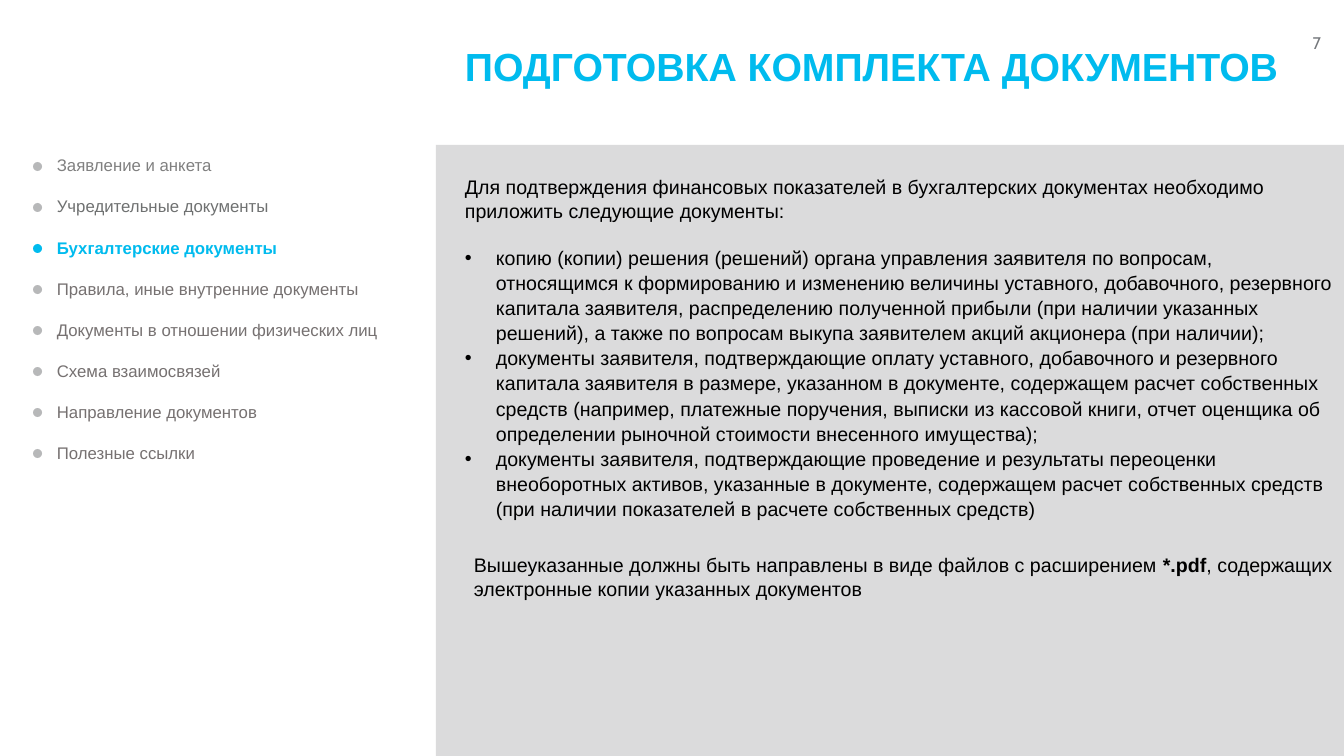
"""Builds the slide on preparing the set of accounting documents."""
from lxml import etree
from pptx import Presentation
from pptx import util as u
from pptx.dml.color import RGBColor
from pptx.enum import shapes, text
from pptx.oxml.ns import qn

COLOURS = {
    "accent": "00BBEE", "panel": "DBDBDC", "dot": "B7B8B9", "black": "000000",
    "number": "74777B", "first": "808080", "second": "6F7171", "menu": "767171",
}
MENU = [
    ("Заявление и анкета", "first"),
    ("Учредительные документы", "second"),
    ("Бухгалтерские документы", "accent"),
    ("Правила, иные внутренние документы", "menu"),
    ("Документы в отношении физических лиц", "menu"),
    ("Схема взаимосвязей", "menu"),
    ("Направление документов", "menu"),
    ("Полезные ссылки", "menu"),
]
INTRO = ("Для подтверждения финансовых показателей в бухгалтерских документах "
         "необходимо приложить следующие документы:")
DOCUMENTS = [
    "копию (копии) решения (решений) органа управления заявителя по вопросам, "
    "относящимся к формированию и изменению величины уставного, добавочного, "
    "резервного капитала заявителя, распределению полученной прибыли (при наличии "
    "указанных решений), а также по вопросам выкупа заявителем акций акционера "
    "(при наличии);",
    "документы заявителя, подтверждающие оплату уставного, добавочного и резервного "
    "капитала заявителя в размере, указанном в документе, содержащем расчет "
    "собственных средств (например, платежные поручения, выписки из кассовой книги, "
    "отчет оценщика об определении рыночной стоимости внесенного имущества);",
    "документы заявителя, подтверждающие проведение и результаты переоценки "
    "внеоборотных активов, указанные в документе, содержащем расчет собственных "
    "средств (при наличии показателей в расчете собственных средств)",
]
CLOSING = [
    ("Вышеуказанные должны быть направлены в виде файлов с расширением ", {}),
    ("*.pdf", {"bold": True}),
    (", содержащих электронные копии указанных документов", {}),
]


class SlideBuilder:
    """Holds the style and the current slide."""

    scale = 12192000 / 1344
    font = {"name": "Arial", "size": 14, "colour": "black", "bold": False}

    def __init__(self, presentation):
        presentation.slide_width = self.px(1344)
        presentation.slide_height = self.px(756)
        self.slide = presentation.slides.add_slide(presentation.slide_layouts[6])

    def px(self, length):
        return u.Emu(round(length * self.scale))

    def shape(self, kind, box, colour):
        shape = self.slide.shapes.add_shape(kind, *map(self.px, box))
        shape.shadow.inherit = False
        shape.fill.solid()
        shape.fill.fore_color.rgb = RGBColor.from_string(COLOURS[colour])
        shape.line.fill.background()

    def text(self, box, paragraphs, layout=None, bullet_indent=0, anchor=text.MSO_ANCHOR.TOP, **font):
        frame = self.slide.shapes.add_textbox(*map(self.px, box)).text_frame
        frame.word_wrap = True
        frame.vertical_anchor = anchor
        for index, runs in enumerate(paragraphs):
            paragraph = frame.paragraphs[0] if index == 0 else frame.add_paragraph()
            for name, value in (layout or {}).items():
                setattr(paragraph, name, value)
            if bullet_indent:
                self.bullet(paragraph, bullet_indent)
            for words, changes in runs:
                self.run(paragraph, words, {**self.font, **font, **changes})

    def bullet(self, paragraph, indent):
        properties = paragraph._p.get_or_add_pPr()
        properties.set("marL", str(self.px(indent)))
        properties.set("indent", str(-self.px(indent)))
        etree.SubElement(properties, qn("a:buFont")).set("typeface", "Arial")
        etree.SubElement(properties, qn("a:buChar")).set("char", "•")

    def run(self, paragraph, words, style):
        run = paragraph.add_run()
        run.text = words
        run.font.color.rgb = RGBColor.from_string(COLOURS[style["colour"]])
        values = {"name": style["name"], "size": u.Pt(style["size"]), "bold": style["bold"]}
        for name, value in values.items():
            setattr(run.font, name, value)

    def menu(self, items):
        self.text((47, 150, 372, 322),
                  [[(label, {"colour": colour, "bold": colour == "accent"})] for label, colour in items],
                  {"space_after": u.Pt(15)}, size=12)
        for row, (_, colour) in enumerate(items):
            self.shape(shapes.MSO_SHAPE.OVAL, (33, 162 + 41 * row, 9, 9),
                       "accent" if colour == "accent" else "dot")


def main():
    presentation = Presentation()
    builder = SlideBuilder(presentation)
    builder.text((1087, 28, 244, 30), [[("7", {})]], {"alignment": text.PP_ALIGN.RIGHT},
                 name="Cabin", size=12, colour="number")
    builder.shape(shapes.MSO_SHAPE.RECTANGLE, (436, 145, 908, 611), "panel")
    builder.text((455, 170, 889, 57), [[(INTRO, {})]])
    builder.text((464, 548, 880, 57), [CLOSING])
    builder.text((455, 239, 889, 288), [[(words, {})] for words in DOCUMENTS],
                 {"line_spacing": 1.07}, bullet_indent=31)
    builder.text((455, 18, 889, 102), [[("ПОДГОТОВКА КОМПЛЕКТА ДОКУМЕНТОВ", {})]],
                 {"line_spacing": 0.9}, anchor=text.MSO_ANCHOR.MIDDLE,
                 size=28, colour="accent", bold=True)
    builder.menu(MENU)
    presentation.save("out.pptx")


if __name__ == "__main__":
    main()
